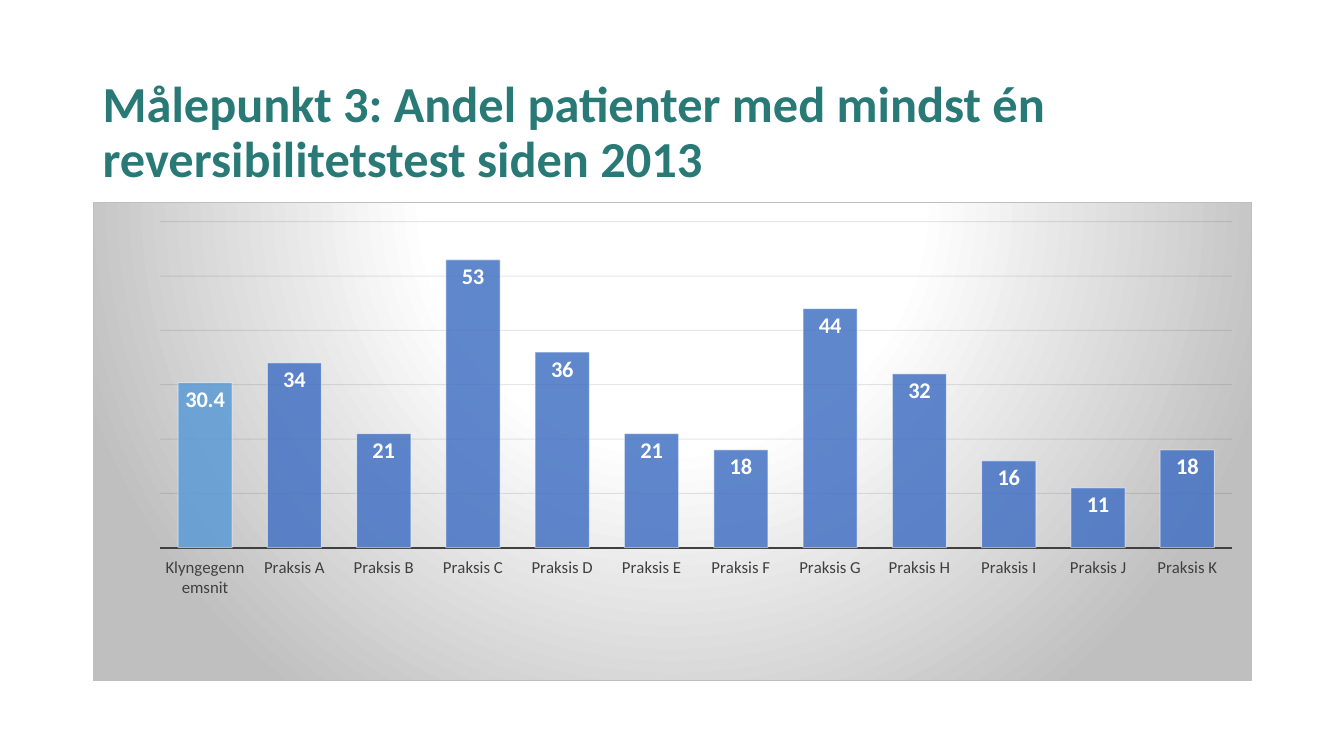
from lxml.etree import SubElement
from pptx import Presentation
from pptx.chart.data import CategoryChartData
from pptx.dml.color import RGBColor
from pptx.enum.chart import XL_CHART_TYPE, XL_LABEL_POSITION, XL_TICK_LABEL_POSITION, XL_TICK_MARK
from pptx.enum.text import MSO_ANCHOR
from pptx.oxml import parse_xml
from pptx.oxml.ns import nsdecls, qn
from pptx.util import Inches, Pt

COLORS = {
    "title": "297A77",
    "practice": "4472C4",
    "average": "5B9BD5",
    "text": "404040",
    "grid": "0D0D0D",
    "white": "FFFFFF",
    "grey": "BFBFBF",
}
FONT = "Calibri"
CATEGORIES = ["Klyngegennemsnit"] + [f"Praksis {letter}" for letter in "ABCDEFGHIJK"]
VALUES = [30.4, 34, 21, 53, 36, 21, 18, 44, 32, 16, 11, 18]


def rgb(name):
    return RGBColor.from_string(COLORS[name])


def style_font(font, size, color, bold=False):
    font.name = FONT
    font.size = Pt(size)
    font.bold = bold
    font.color.rgb = rgb(color)


def paint(fill, color, opacity=100):
    fill.solid()
    fill.fore_color.rgb = rgb(color)
    if opacity < 100:
        clr = fill._xPr.find(qn("a:solidFill")).find(qn("a:srgbClr"))
        SubElement(clr, qn("a:alpha"), val=str(opacity * 1000))


def style_line(line, color, width, opacity=100):
    line.width = Pt(width)
    paint(line.fill, color, opacity)


def style_bar(bar, color):
    paint(bar.format.fill, color, 85)
    style_line(bar.format.line, "white", 0.75, 50)


def add_title(s, x, y, w, h):
    tf = s.shapes.add_textbox(Inches(x), Inches(y), Inches(w), Inches(h)).text_frame
    tf.word_wrap = True
    tf.vertical_anchor = MSO_ANCHOR.MIDDLE
    p = tf.paragraphs[0]
    p.text = "Målepunkt 3: Andel patienter med mindst én reversibilitetstest siden 2013"
    p.line_spacing = 0.9
    style_font(p.font, 36, "title", True)


def add_background(chart):
    stops = "".join(
        f'<a:gs pos="{pos * 1000}"><a:srgbClr val="{COLORS[color]}"/></a:gs>'
        for pos, color in ((0, "white"), (39, "white"), (100, "grey"))
    )
    chart._chartSpace.find(qn("c:chart")).addnext(parse_xml(
        f'<c:spPr {nsdecls("c", "a")}><a:gradFill><a:gsLst>{stops}</a:gsLst>'
        '<a:path path="circle"><a:fillToRect l="50000" t="-80000" r="50000" b="180000"/></a:path>'
        f'</a:gradFill><a:ln w="{Pt(0.75)}"><a:solidFill><a:srgbClr val="{COLORS["grey"]}"/>'
        "</a:solidFill></a:ln></c:spPr>"
    ))


def place_plot(chart, x, y, w, h):
    plot_area = chart._chartSpace.find(qn("c:chart")).find(qn("c:plotArea"))
    for old in plot_area.findall(qn("c:layout")):
        plot_area.remove(old)
    layout = SubElement(plot_area, qn("c:layout"))
    plot_area.insert(0, layout)
    manual = SubElement(layout, qn("c:manualLayout"))
    settings = {"layoutTarget": "inner", "xMode": "edge", "yMode": "edge",
                "x": x, "y": y, "w": w, "h": h}
    for tag, val in settings.items():
        SubElement(manual, qn(f"c:{tag}"), val=str(val))


def add_practice_chart(s, x, y, w, h):
    data = CategoryChartData()
    data.categories = CATEGORIES
    data.add_series("Series 1", VALUES)
    chart = s.shapes.add_chart(XL_CHART_TYPE.COLUMN_CLUSTERED, Inches(x), Inches(y),
                               Inches(w), Inches(h), data).chart
    chart.has_legend = False
    chart.has_title = False
    chart.font.name = FONT
    chart.font.size = Pt(10)
    add_background(chart)
    place_plot(chart, 0.058, 0.041, 0.925, 0.681)

    cat_axis = chart.category_axis
    cat_axis.major_tick_mark = XL_TICK_MARK.NONE
    cat_axis.tick_label_position = XL_TICK_LABEL_POSITION.LOW
    style_font(cat_axis.tick_labels.font, 12, "text")
    style_line(cat_axis.format.line, "text", 1.5)

    val_axis = chart.value_axis
    val_axis.visible = False
    val_axis.minimum_scale = 0
    val_axis.maximum_scale = 60
    val_axis.major_unit = 10
    val_axis.has_major_gridlines = True
    style_line(val_axis.major_gridlines.format.line, "grid", 0.75, 10)

    plot = chart.plots[0]
    plot.gap_width = 65
    plot.vary_by_categories = False
    series = plot.series[0]
    style_bar(series, "practice")
    style_bar(series.points[0], "average")
    labels = series.data_labels
    labels.show_value = True
    labels.position = XL_LABEL_POSITION.INSIDE_END
    style_font(labels.font, 16, "white", True)


def main():
    prs = Presentation()
    prs.slide_width = Inches(13.33)
    prs.slide_height = Inches(7.5)
    s = prs.slides.add_slide(prs.slide_layouts[6])
    add_title(s, 0.92, 0.6, 11.5, 1.45)
    add_practice_chart(s, 0.92, 2, 11.5, 4.76)
    prs.save("out.pptx")


if __name__ == "__main__":
    main()
